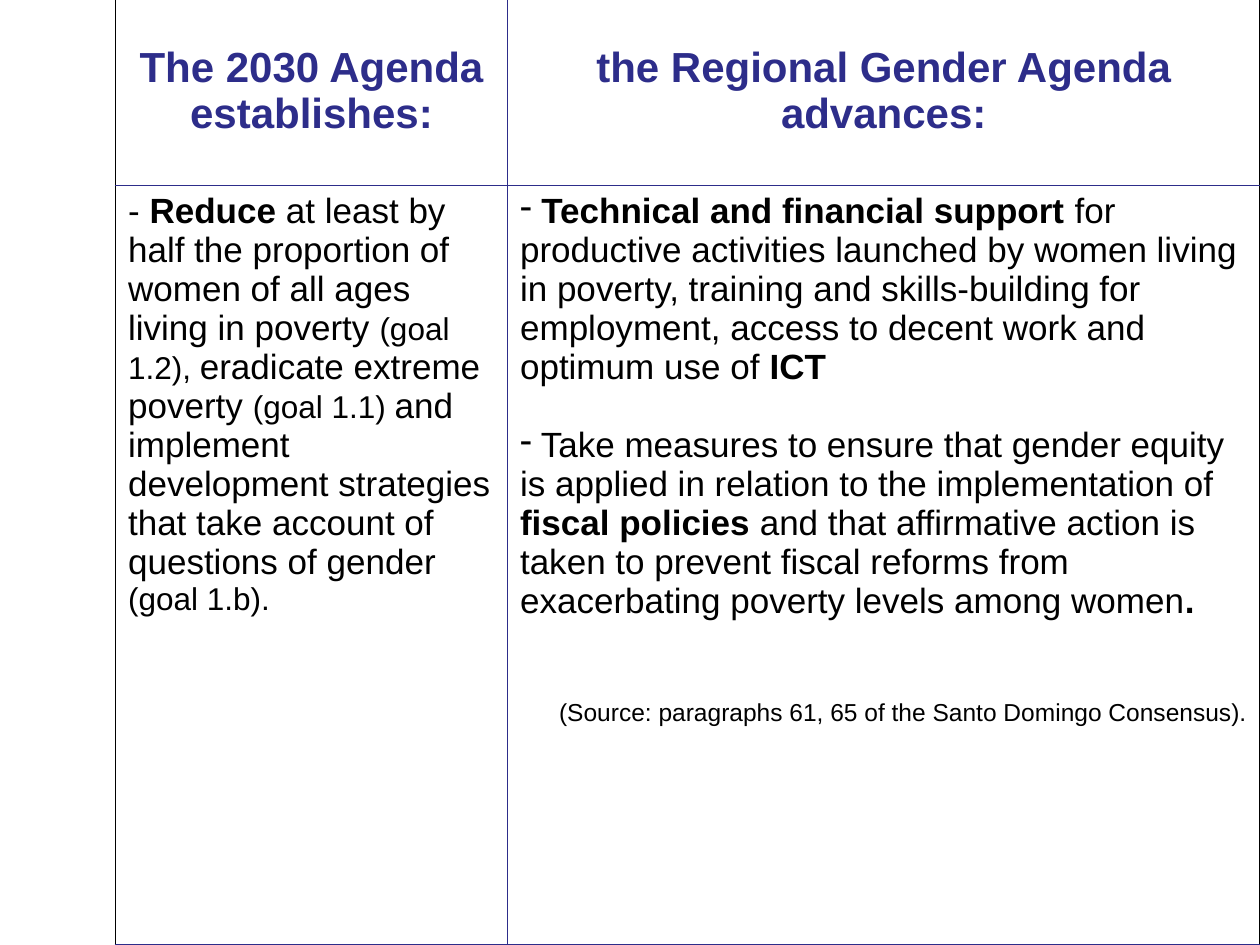
from lxml import etree
from pptx import Presentation
from pptx.dml.color import RGBColor
from pptx.enum.text import MSO_ANCHOR, PP_ALIGN
from pptx.oxml.ns import qn
from pptx.util import Pt

LEFT, CENTER, RIGHT = PP_ALIGN.LEFT, PP_ALIGN.CENTER, PP_ALIGN.RIGHT
TOP, MIDDLE = MSO_ANCHOR.TOP, MSO_ANCHOR.MIDDLE
BLACK = RGBColor(0x00, 0x00, 0x00)
NAVY = RGBColor(0x2D, 0x2D, 0x8A)
FONT = "Arial"
BLANK_LAYOUT = 6

TABLE_LEFT, TABLE_TOP = 66, -2
COLUMN_WIDTHS = [224, 430]
ROW_HEIGHTS = [108, 434]

HEADERS = ["The 2030 Agenda establishes:", "the Regional Gender Agenda advances:"]

# Each paragraph: alignment, dash bullet, space before, runs of (text, size, bold)
BODIES = [
    [
        (LEFT, False, 0, [
            ("- ", 20, False),
            ("Reduce ", 20, True),
            ("at least by half the proportion of women of all ages living in poverty ", 20, False),
            ("(goal 1.2), ", 18, False),
            ("eradicate extreme poverty ", 20, False),
            ("(goal 1.1) ", 18, False),
            ("and implement development strategies that take account of questions of gender ", 20, False),
            ("(goal 1.b).", 18, False),
        ]),
    ],
    [
        (LEFT, True, 0, [
            (" ", 20, False),
            ("Technical and financial support ", 20, True),
            ("for productive activities launched by women living in poverty, training and "
             "skills-building for employment, access to decent work and optimum use of ", 20, False),
            ("ICT", 20, True),
        ]),
        (LEFT, True, 22.3, [
            (" Take measures to ensure that gender equity is applied in relation to the "
             "implementation of ", 20, False),
            ("fiscal policies", 20, True),
            (" and that affirmative action is taken to prevent fiscal reforms from "
             "exacerbating poverty levels among women", 20, False),
            (".", 20, True),
        ]),
        (RIGHT, False, 44.6, [
            ("(Source: paragraphs 61, 65 of the Santo Domingo Consensus).", 14, False),
        ]),
    ],
]


def set_font(font, size, bold, color):
    font.name = FONT
    font.size = Pt(size)
    font.bold = bold
    font.color.rgb = color


def add_dash_bullet(paragraph):
    properties = paragraph._p.get_or_add_pPr()
    properties.set("marL", "0")
    properties.set("indent", "0")
    etree.SubElement(properties, qn("a:buChar"), char="-")


def set_borders(cell, colors):
    properties = cell._tc.get_or_add_tcPr()
    for side, color in colors.items():
        line = etree.SubElement(properties, qn(f"a:ln{side}"), w=str(Pt(1)))
        fill = etree.SubElement(line, qn("a:solidFill"))
        etree.SubElement(fill, qn("a:srgbClr"), val=str(color))


def fill_header(cell, text):
    cell.vertical_anchor = MIDDLE
    paragraph = cell.text_frame.paragraphs[0]
    paragraph.text = text
    paragraph.alignment = CENTER
    set_font(paragraph.font, 24, True, NAVY)


def fill_body(cell, paragraphs):
    cell.vertical_anchor = TOP
    frame = cell.text_frame
    for index, (alignment, bullet, space_before, runs) in enumerate(paragraphs):
        paragraph = frame.add_paragraph() if index else frame.paragraphs[0]
        if bullet:
            add_dash_bullet(paragraph)
        paragraph.alignment = alignment
        paragraph.space_before = Pt(space_before)
        for text, size, bold in runs:
            run = paragraph.add_run()
            run.text = text
            set_font(run.font, size, bold, BLACK)


def main():
    presentation = Presentation()
    presentation.slide_width, presentation.slide_height = Pt(720), Pt(540)
    slide = presentation.slides.add_slide(presentation.slide_layouts[BLANK_LAYOUT])

    table = slide.shapes.add_table(
        len(ROW_HEIGHTS), len(COLUMN_WIDTHS), Pt(TABLE_LEFT), Pt(TABLE_TOP),
        Pt(sum(COLUMN_WIDTHS)), Pt(sum(ROW_HEIGHTS))).table
    table.first_row = False
    table.horz_banding = False
    for row, height in zip(table.rows, ROW_HEIGHTS):
        row.height = Pt(height)

    last_column = len(COLUMN_WIDTHS) - 1
    for index, width in enumerate(COLUMN_WIDTHS):
        table.columns[index].width = Pt(width)
        header, body = table.cell(0, index), table.cell(1, index)
        fill_header(header, HEADERS[index])
        fill_body(body, BODIES[index])
        for cell, top_color in ((header, BLACK), (body, NAVY)):
            set_borders(cell, {
                "L": BLACK if index == 0 else NAVY,
                "R": BLACK if index == last_column else NAVY,
                "T": top_color,
                "B": NAVY,
            })
            cell.fill.background()

    presentation.save("out.pptx")


if __name__ == "__main__":
    main()
